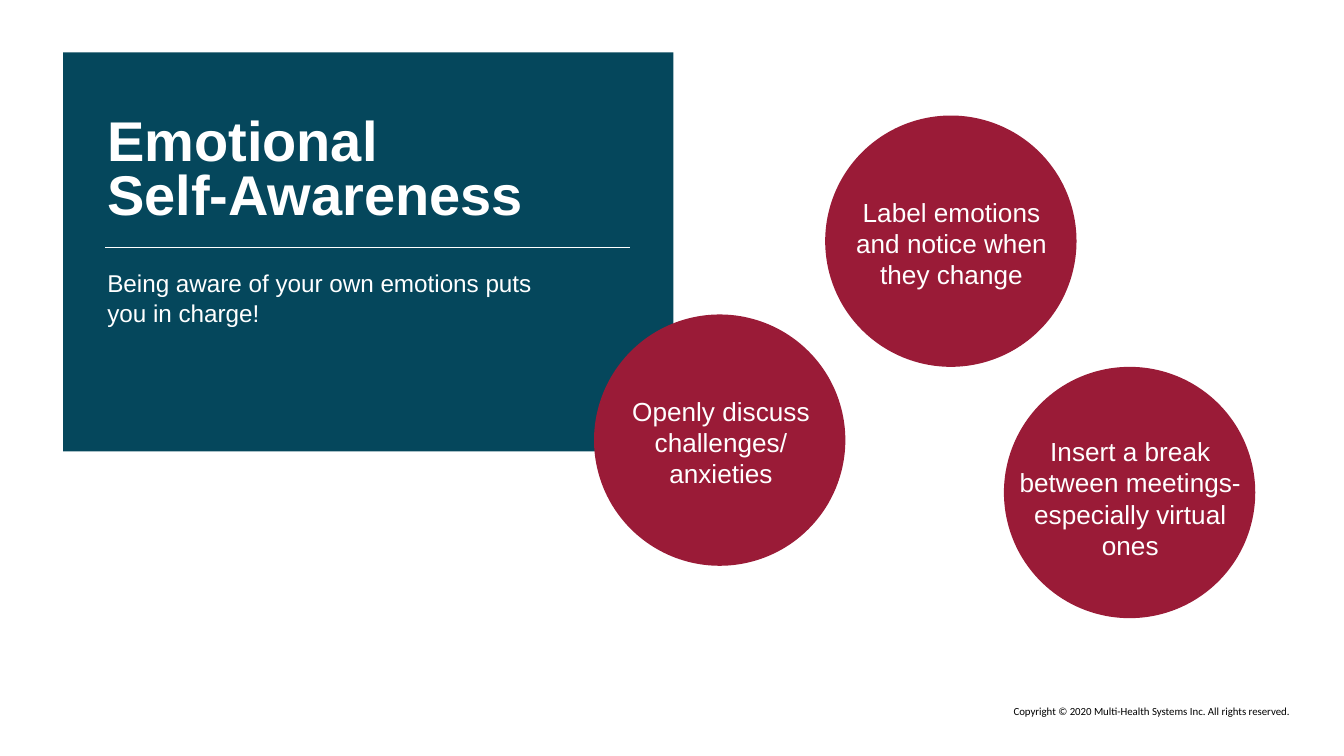
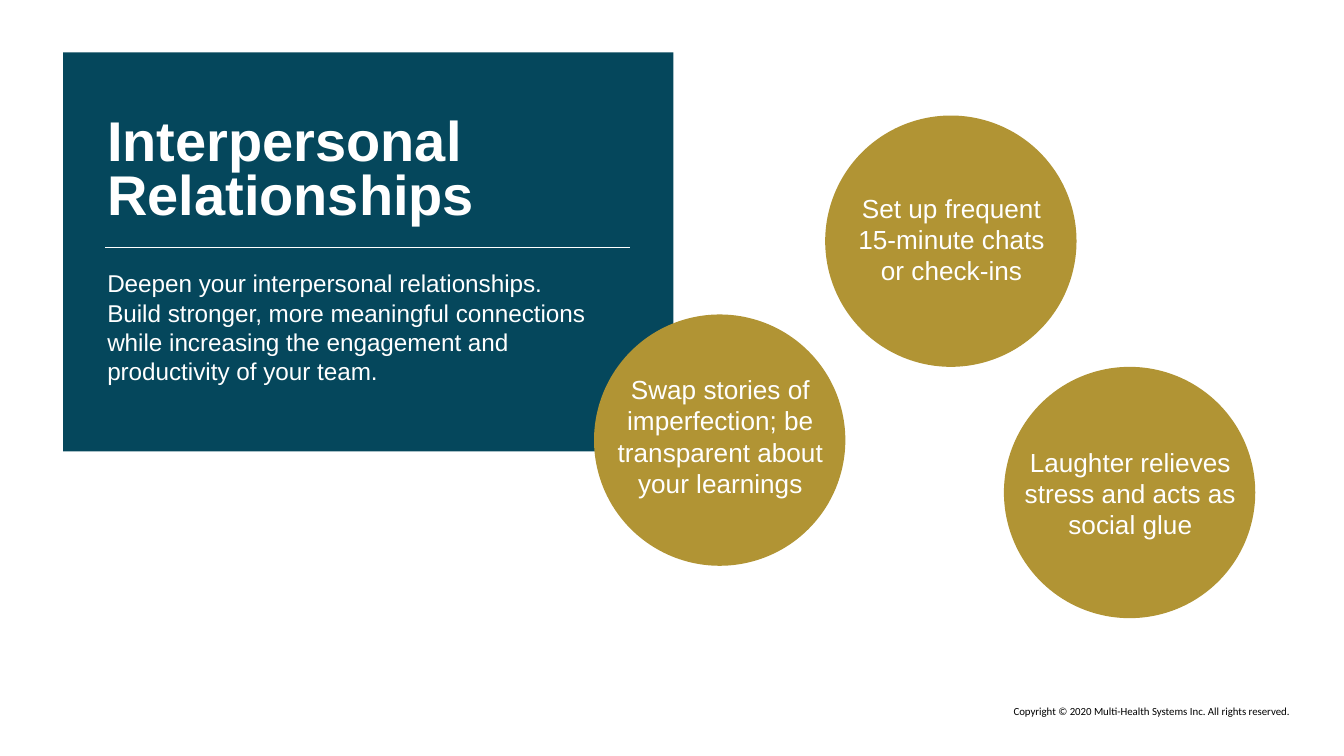
from copy import deepcopy

from lxml.etree import SubElement
from pptx import Presentation
from pptx.dml.color import RGBColor
from pptx.enum.shapes import MSO_CONNECTOR, MSO_SHAPE
from pptx.enum.text import MSO_ANCHOR, PP_ALIGN
from pptx.oxml.ns import qn
from pptx.util import Inches, Pt

TEAL = RGBColor(0x05, 0x47, 0x5C)
CRIMSON = RGBColor(0x9A, 0x1B, 0x37)
GOLD = RGBColor(0xB1, 0x94, 0x34)
WHITE = RGBColor(0xFF, 0xFF, 0xFF)
BLACK = RGBColor(0x00, 0x00, 0x00)

# The grid has 100 columns; its rows are as high as the columns are wide
COLUMNS = 100
DIAMETER = 18.7
CIRCLES = ((61.4, 8.6), (44.2, 23.4), (74.7, 27.3))

TITLE = {"name": "Arial", "size": Pt(30), "bold": True}
BODY = {"name": "Arial", "size": Pt(13)}
LABEL = {"name": "Arial", "size": Pt(14)}
FOOTER = {"name": "Calibri", "size": Pt(10)}
COPYRIGHT = "Copyright © 2020 Multi-Health Systems Inc. All rights reserved."

# Each label: left, top, width, height, wording
PAGES = (
    {
        "title": "Emotional \vSelf-Awareness",
        "body": "Being aware of your own emotions puts you in charge!",
        "body_width": 35.9,
        "accent": CRIMSON,
        "labels": (
            (74.7, 31.9, 18.8, 10.4,
             "Insert a break between meetings-especially virtual ones"),
            (44.5, 28.9, 18.3, 8.1, "Openly discuss challenges/\vanxieties"),
            (62.2, 14.1, 17.2, 8.1,
             "Label emotions and notice when they change"),
        ),
    },
    {
        "title": "Interpersonal Relationships",
        "body": "Deepen your interpersonal relationships. Build stronger, "
                "more meaningful connections while increasing the engagement "
                "and productivity of your team.",
        "body_width": 38.3,
        "accent": GOLD,
        "labels": (
            (74.7, 32.7, 18.8, 8.1,
             "Laughter relieves stress and acts as social glue"),
            (44.2, 27.3, 18.8, 10.4,
             "Swap stories of imperfection; be transparent about "
             "your learnings"),
            (62.2, 13.8, 17.2, 8.1,
             "Set up frequent 15-minute chats or check-ins"),
        ),
    },
)


class Painter:
    """Holds the deck, its grid and the current page."""

    def __init__(self):
        self.deck = Presentation()
        self.deck.slide_width = Inches(10)
        self.deck.slide_height = Inches(10) * 9 // 16
        self.page = None

    def new_page(self):
        self.page = self.deck.slides.add_slide(self.deck.slide_layouts[6])

    def grid(self, *cells):
        return [round(cell * self.deck.slide_width / COLUMNS)
                for cell in cells]

    def shape(self, kind, area, color):
        shape = self.page.shapes.add_shape(kind, *self.grid(*area))
        shape.shadow.inherit = False
        shape.fill.solid()
        shape.fill.fore_color.rgb = color
        shape.line.fill.background()

    def rule(self, left, right, row):
        line = self.page.shapes.add_connector(
            MSO_CONNECTOR.STRAIGHT, *self.grid(left, row, right, row))
        line.line.color.rgb = WHITE
        line.line.width = Pt(0.75)
        SubElement(line._element.spPr, qn("a:effectLst"))

    def text(self, area, wording, style, color=WHITE, align=PP_ALIGN.LEFT,
             anchor=MSO_ANCHOR.TOP, spacing=None, baseline=None):
        box = self.page.shapes.add_textbox(*self.grid(*area))
        frame = box.text_frame
        frame.word_wrap = True
        frame.vertical_anchor = anchor
        para = frame.paragraphs[0]
        para.text = wording
        para.alignment = align
        para.line_spacing = spacing
        for span in para.runs:
            for name, value in style.items():
                setattr(span.font, name, value)
            span.font.color.rgb = color
            if baseline:
                span._r.get_or_add_rPr().set("baseline", str(baseline))
        # Line breaks take the format of the text around them
        for line_break in para._p.findall(qn("a:br")):
            line_break.append(deepcopy(para.runs[0]._r.rPr))

    def panel(self, title, body, body_width):
        self.shape(MSO_SHAPE.RECTANGLE, (4.7, 3.9, 45.4, 29.7), TEAL)
        self.rule(7.8, 46.9, 18.4)
        self.text((7, 7, 40.6, 11.7), title, TITLE,
                  anchor=MSO_ANCHOR.MIDDLE, spacing=Pt(29))
        self.text((7, 19.5, body_width, 13.3), body, BODY)

    def circles(self, color, labels):
        for left, top in CIRCLES:
            self.shape(MSO_SHAPE.OVAL, (left, top, DIAMETER, DIAMETER), color)
        for *area, wording in labels:
            self.text(area, wording, LABEL, align=PP_ALIGN.CENTER)

    def footer(self):
        self.text((70.3, 51.8, 26.6, 2.1), COPYRIGHT, FOOTER, BLACK,
                  PP_ALIGN.RIGHT, baseline=30000)


def main():
    painter = Painter()
    for content in PAGES:
        painter.new_page()
        painter.panel(content["title"], content["body"], content["body_width"])
        painter.circles(content["accent"], content["labels"])
        painter.footer()
    painter.deck.save("out.pptx")


if __name__ == "__main__":
    main()
